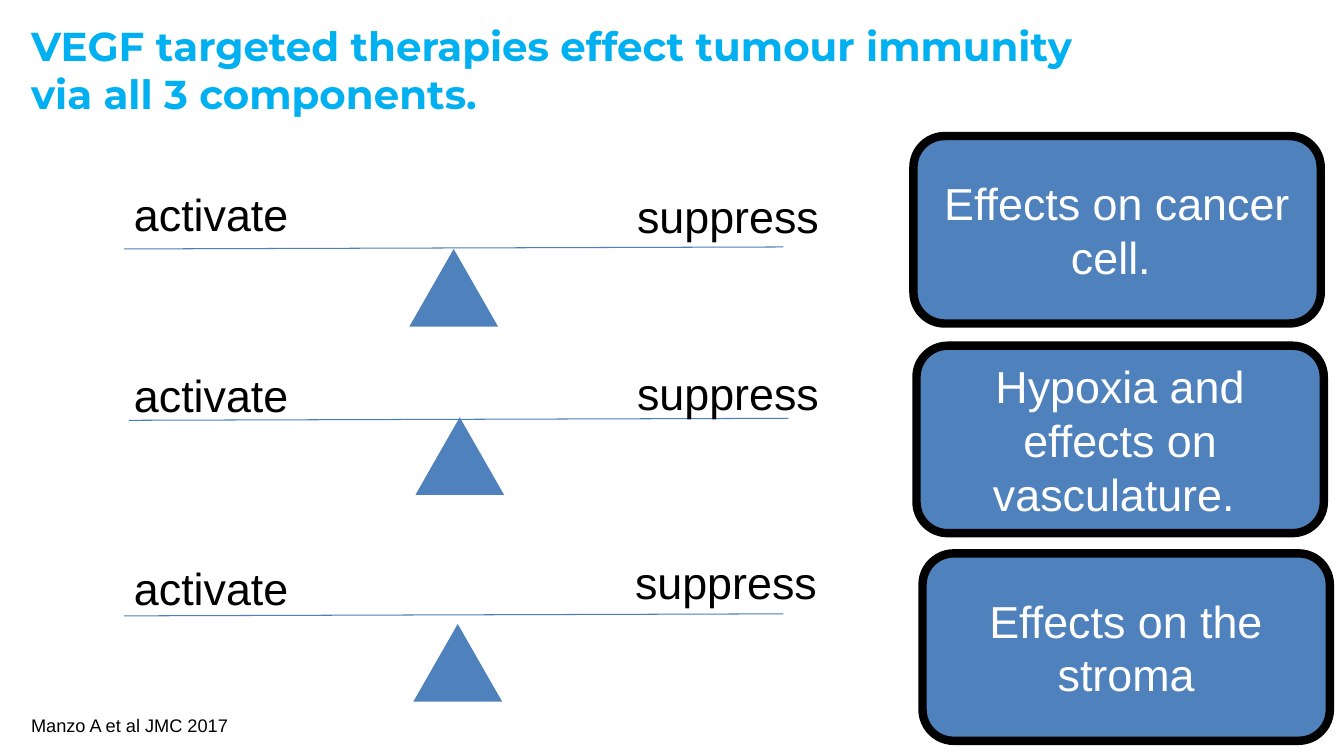
from pptx import Presentation
from pptx.dml.color import RGBColor
from pptx.enum.shapes import MSO_CONNECTOR, MSO_SHAPE
from pptx.enum.text import MSO_ANCHOR, PP_ALIGN
from pptx.oxml.ns import qn
from pptx.util import Inches, Pt
from lxml import etree

ROUND, WEDGE = MSO_SHAPE.ROUNDED_RECTANGLE, MSO_SHAPE.ISOSCELES_TRIANGLE
STRAIGHT = MSO_CONNECTOR.STRAIGHT
TOP, MID, LOW = MSO_ANCHOR.TOP, MSO_ANCHOR.MIDDLE, MSO_ANCHOR.BOTTOM
LEFT, CENTER = PP_ALIGN.LEFT, PP_ALIGN.CENTER

BLUE, SKY, BEAM = "4F81BD", "00B0F0", "4B7EBC"
BLACK, WHITE = "000000", "FFFFFF"
HEAD = {"name": "Montserrat", "size": Pt(28.8), "bold": True}
BODY = {"name": "Arial", "size": Pt(32)}
NOTE = {"name": "Arial", "size": Pt(13)}


def color(code):
    return RGBColor.from_string(code)


class Board:
    """Holds the current slide and draws its elements."""

    def __init__(self, slide):
        self.shapes = slide.shapes

    def set_text(self, shape, text, font, ink, align=LEFT, anchor=TOP,
                 wrap=True):
        frame = shape.text_frame
        frame.word_wrap = wrap
        frame.vertical_anchor = anchor
        para = frame.paragraphs[0]
        para.text = text
        para.alignment = align
        for run in para.runs:
            for key, value in font.items():
                setattr(run.font, key, value)
            run.font.color.rgb = color(ink)

    def label(self, box, text, font, ink=BLACK, **style):
        shape = self.shapes.add_textbox(*map(Inches, box))
        self.set_text(shape, text, font, ink, **style)

    def block(self, kind, box, edge=None):
        """Add a blue shape, with a thick edge if a colour is given."""
        shape = self.shapes.add_shape(kind, *map(Inches, box))
        shape.shadow.inherit = False
        shape.fill.solid()
        shape.fill.fore_color.rgb = color(BLUE)
        if edge:
            shape.line.color.rgb = color(edge)
            shape.line.width = Pt(6)
        else:
            shape.line.fill.background()
        return shape

    def card(self, box, text):
        shape = self.block(ROUND, box, BLACK)
        self.set_text(shape, text, BODY, WHITE, align=CENTER, anchor=MID)

    def beam(self, left, top):
        ends = (left, top, left + 6.54, top - 0.02)
        line = self.shapes.add_connector(STRAIGHT, *map(Inches, ends))
        line.line.color.rgb = color(BEAM)
        line.line.width = Pt(0.75)
        etree.SubElement(line._element.spPr, qn("a:effectLst"))


# Each row: card text, then left and top of card, beam, wedge,
# "activate" and "suppress".
ROWS = [
    ("Effects on cancer cell. ",
     (9.06, 1.35), (1.23, 2.47), (4.06, 2.47), (1.23, 1.8), (6.22, 1.82)),
    ("Hypoxia and effects on vasculature. ",
     (9.09, 3.43), (1.28, 4.17), (4.12, 4.14), (1.23, 3.6), (6.22, 3.58)),
    ("Effects on the stroma",
     (9.15, 5.49), (1.23, 6.11), (4.1, 6.19), (1.23, 5.51), (6.2, 5.45)),
]


def main():
    deck = Presentation()
    deck.slide_width, deck.slide_height = Inches(13.33), Inches(7.5)
    board = Board(deck.slides.add_slide(deck.slide_layouts[6]))

    title = ("VEGF targeted therapies effect tumour immunity \v"
             "via all 3 components.")
    board.label((0.21, 0.18, 12.91, 1.02), title, HEAD, SKY, anchor=MID)
    board.label((0.21, 6.95, 9.86, 0.4), "Manzo A et al JMC 2017", NOTE,
                anchor=LOW)

    for text, card, beam, wedge, act, sup in ROWS:
        board.card((*card, 4.04, 1.86), text)
        board.block(WEDGE, (*wedge, 0.88, 0.77))
        board.beam(*beam)
        board.label((*act, 1.75, 0.64), "activate", BODY, wrap=False)
        board.label((*sup, 2.14, 0.64), "suppress", BODY, wrap=False)

    deck.save("out.pptx")


if __name__ == "__main__":
    main()
